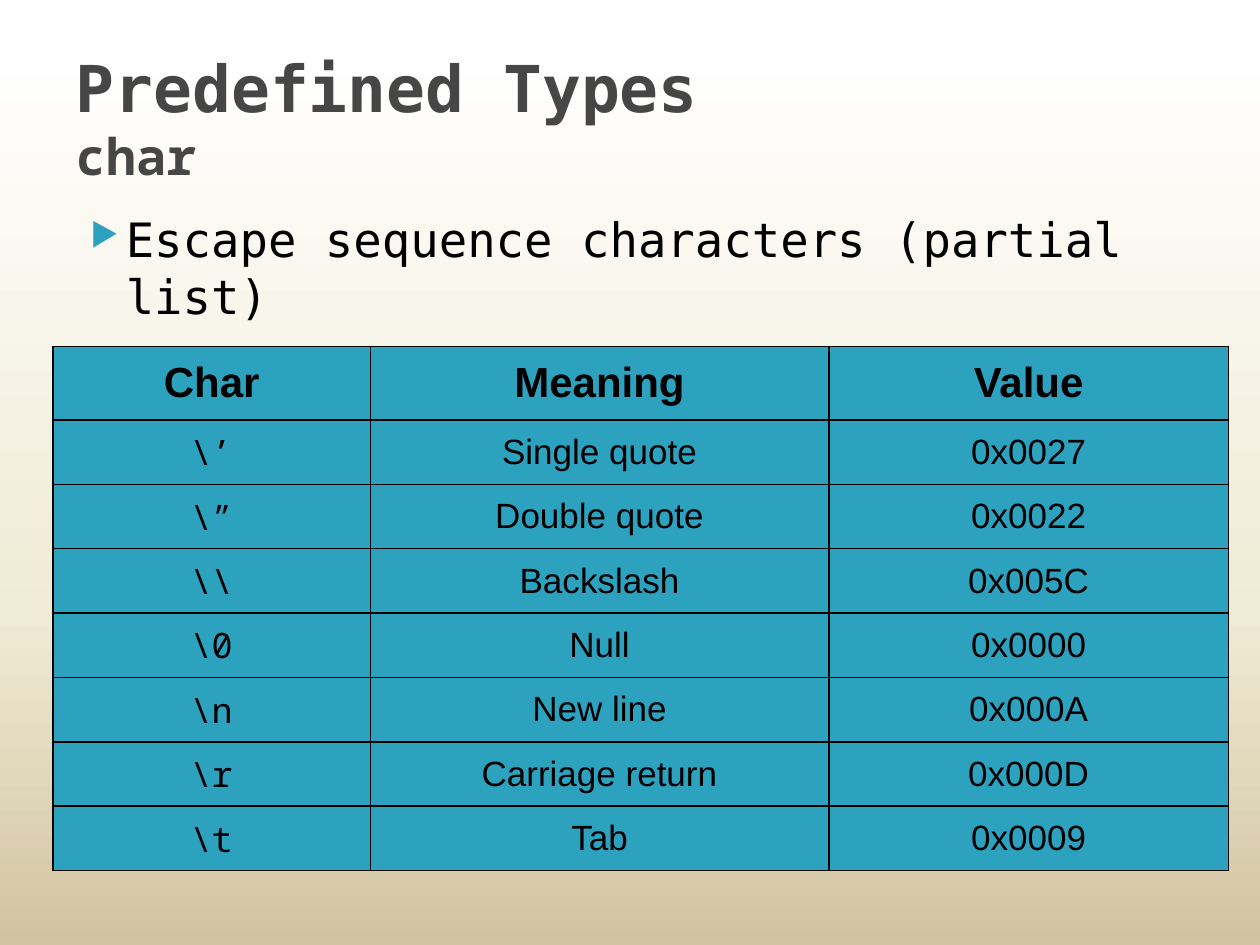
from dataclasses import dataclass
from copy import deepcopy

from lxml.etree import SubElement
from pptx import Presentation
from pptx.dml.color import RGBColor
from pptx.enum.text import MSO_ANCHOR, MSO_AUTO_SIZE, PP_ALIGN
from pptx.oxml.ns import qn
from pptx.util import Inches, Pt


@dataclass(frozen=True)
class Theme:
    wide: float = 10
    high: float = 7.5
    teal: str = "2DA2BF"
    black: str = "000000"
    gray: str = "464646"
    stops: tuple = ((0.05, "FFFFFF"), (0.65, "F0EBD5"), (1, "D1C39F"))
    sans: str = "Arial"
    mono: str = "DejaVu Sans Mono"
    code: str = "Noto Sans Mono"
    title: float = 36.9
    sub: float = 28.8
    body: float = 27
    head: float = 24
    cell: float = 20


T = Theme()
ROWS = [
    ("Char", "Meaning", "Value"),
    ("\\’", "Single quote", "0x0027"),
    ("\\”", "Double quote", "0x0022"),
    ("\\\\", "Backslash", "0x005C"),
    ("\\0", "Null", "0x0000"),
    ("\\n", "New line", "0x000A"),
    ("\\r", "Carriage return", "0x000D"),
    ("\\t", "Tab", "0x0009"),
]


def write(para, text, size, font=T.sans, color=T.black, bold=False,
          align=PP_ALIGN.LEFT):
    para.alignment = align
    run = para.add_run()
    run.text = text
    face = run.font
    face.size, face.name, face.bold = Pt(size), font, bold
    face.color.rgb = RGBColor.from_string(color)


def place(shape, box):
    shape.left, shape.top, shape.width, shape.height = map(Inches, box)


def shade(slide):
    """Fill the background with the vertical gradient of the theme."""
    fill = slide.background.fill
    fill.gradient()
    fill.gradient_angle = 270
    stop_list = slide.element.find(".//" + qn("a:gsLst"))
    stop_list.append(deepcopy(stop_list[-1]))
    for stop, (share, color) in zip(fill.gradient_stops, T.stops):
        stop.position = share
        stop.color.rgb = RGBColor.from_string(color)


def add_title(slide, box):
    title = slide.shapes.title
    place(title, box)
    frame = title.text_frame
    frame.auto_size = MSO_AUTO_SIZE.NONE
    frame.vertical_anchor = MSO_ANCHOR.MIDDLE
    para = frame.paragraphs[0]
    write(para, "Predefined Types", T.title, T.mono, T.gray, True)
    para.add_line_break()
    write(para, "char", T.sub, T.code, T.gray, True)


def add_bullet(slide, box):
    frame = slide.shapes.add_textbox(*map(Inches, box)).text_frame
    frame.word_wrap = True
    para = frame.paragraphs[0]
    props = para._p.get_or_add_pPr()
    props.set("marL", str(Inches(0.4)))
    props.set("indent", str(Inches(-0.28)))
    tint = SubElement(props, qn("a:buClr"))
    SubElement(tint, qn("a:srgbClr"), val=T.teal)
    SubElement(props, qn("a:buSzPct"), val="68000")
    SubElement(props, qn("a:buChar"), char="▶")
    write(para, "Escape sequence characters (partial list)", T.body, T.mono)


def edge(cell):
    """Draw the cell's four borders and fill it."""
    props = cell._tc.get_or_add_tcPr()
    for side in ("lnL", "lnR", "lnT", "lnB"):
        line = SubElement(props, qn("a:" + side), w=str(Pt(1)))
        paint = SubElement(line, qn("a:solidFill"))
        SubElement(paint, qn("a:srgbClr"), val=T.black)
    cell.fill.solid()
    cell.fill.fore_color.rgb = RGBColor.from_string(T.teal)


def add_grid(slide, box, cols, top):
    """Place the table; cols are width shares, top is the header's share."""
    wide, high = box[2:]
    shape = slide.shapes.add_table(len(ROWS), len(cols), *map(Inches, box))
    table = shape.table
    for col, share in zip(table.columns, cols):
        col.width = Inches(wide * share)
    rest = (1 - top) / (len(ROWS) - 1)
    for i, texts in enumerate(ROWS):
        table.rows[i].height = Inches(high * (rest if i else top))
        for j, text in enumerate(texts):
            cell = table.cell(i, j)
            edge(cell)
            cell.vertical_anchor = MSO_ANCHOR.MIDDLE
            write(cell.text_frame.paragraphs[0], text,
                  T.cell if i else T.head,
                  T.code if i and j == 0 else T.sans,
                  bold=i == 0, align=PP_ALIGN.CENTER)


def main():
    deck = Presentation()
    deck.slide_width, deck.slide_height = Inches(T.wide), Inches(T.high)
    slide = deck.slides.add_slide(deck.slide_layouts[5])
    left, wide = T.wide * 0.05, T.wide * 0.9
    shade(slide)
    add_title(slide, (left, T.high * 0.04, wide, 1.25))
    add_bullet(slide, (left, 1.62, wide, 1.1))
    add_grid(slide, (0.42, 2.75, 9.33, 4.16), (0.27, 0.39, 0.34), 0.14)
    deck.save("out.pptx")


if __name__ == "__main__":
    main()
